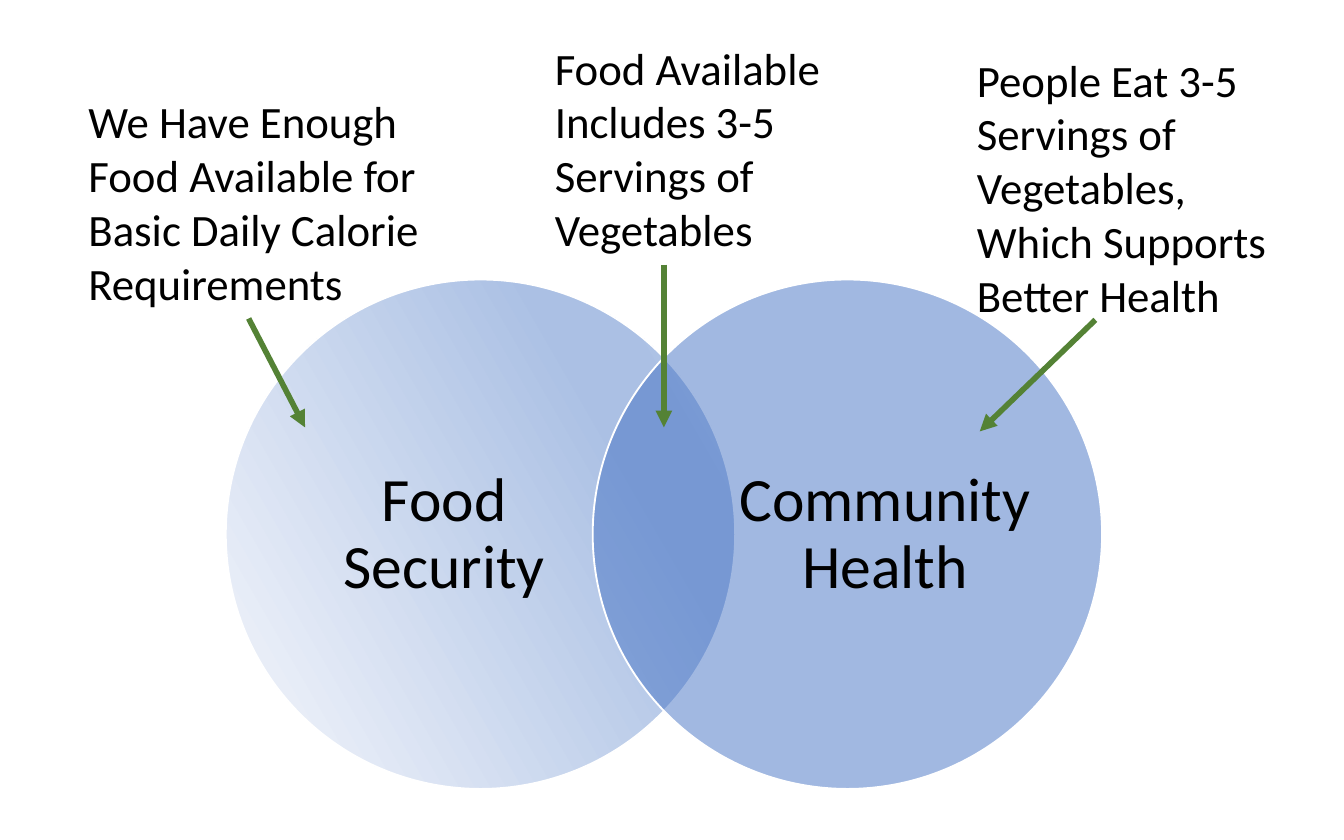
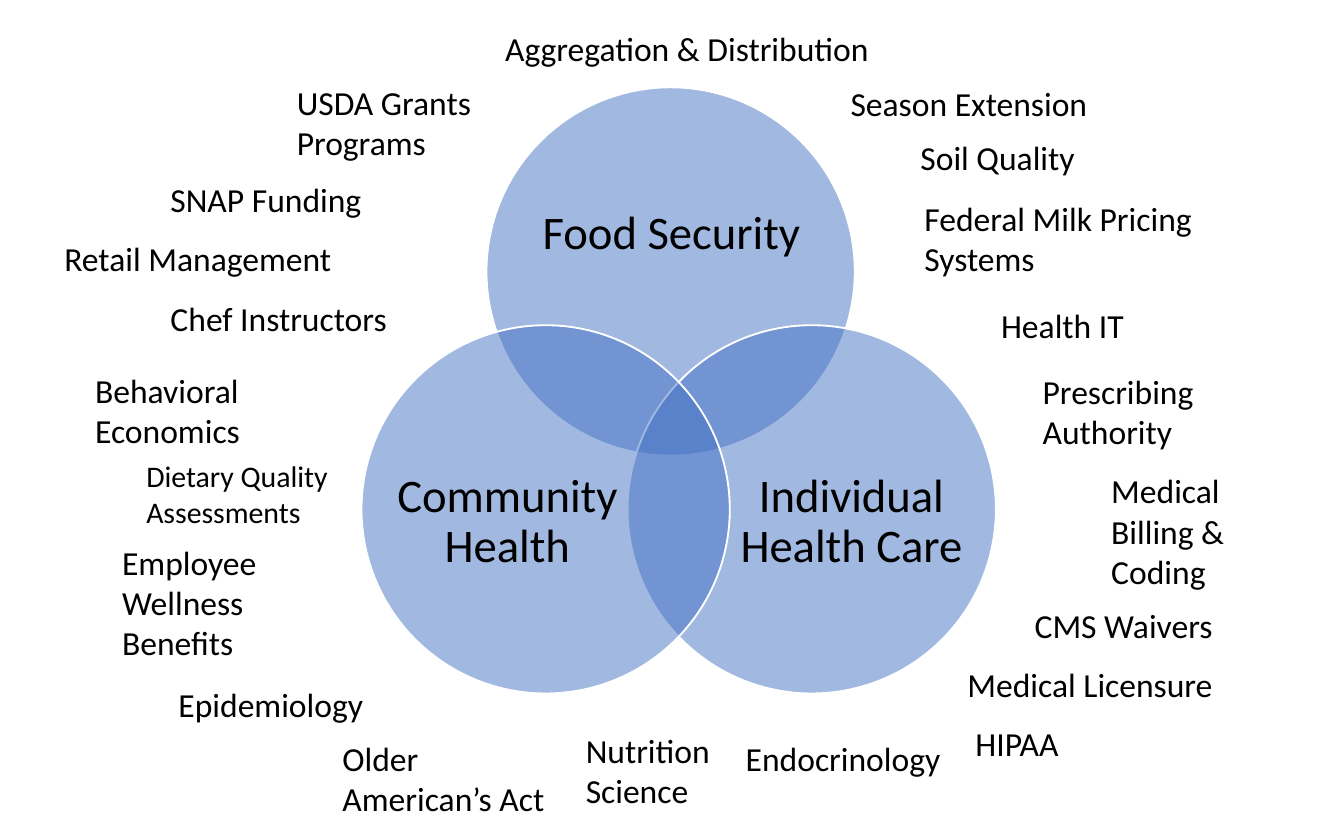
import dataclasses

import lxml.etree
import pptx
import pptx.dml.color
import pptx.enum.dml
import pptx.enum.shapes
import pptx.enum.text
import pptx.oxml.ns
import pptx.util

Inches = pptx.util.Inches
Pt = pptx.util.Pt
RGB = pptx.dml.color.RGBColor.from_string
qn = pptx.oxml.ns.qn


@dataclasses.dataclass(frozen=True)
class Theme:
    font: str = "Calibri"
    text: str = "000000"
    circle: str = "4472C4"
    circle_opacity: int = 50
    outline: str = "FFFFFF"
    arrow: str = "548235"
    fade: tuple = ((0, "F6F8FC"), (74, "ABC0E4"), (83, "ABC0E4"), (100, "C7D5ED"))
    fade_angle: int = 330
    outline_width: int = 1
    arrow_width: int = 3
    pair_label: int = 33
    trio_label: int = 25
    callout: int = 24
    topic: int = 18
    small_topic: int = 16


THEME = Theme()

PAIR_SIZE = 3.79
PAIR_TOP = 2.08
PAIR = [
    ("Food Security", 1.68, 2.21, True),
    ("Community Health", 4.41, 5.49, False),
]

CALLOUTS = [
    ("We Have Enough Food Available for Basic Daily Calorie Requirements",
     (0.56, 0.65, 2.93, 1.72), (1.85, 2.37), (2.27, 3.18)),
    ("Food Available Includes 3-5 Servings of Vegetables",
     (4.03, 0.25, 2.23, 1.72), (4.94, 1.97), (4.94, 3.18)),
    ("People Eat 3-5 Servings of Vegetables, Which Supports Better Health",
     (7.17, 0.34, 2.45, 2.12), (8.15, 2.38), (7.29, 3.21)),
]

TRIO_SIZE = 2.74
TRIO = [
    ("Food Security", (3.62, 0.65), (3.99, 1.13, 2.01, 1.23)),
    ("Individual Health Care", (4.67, 2.42), (5.51, 3.13, 1.65, 1.51)),
    ("Community Health", (2.69, 2.42), (2.95, 3.13, 1.65, 1.51)),
]

LINE_HEIGHTS = {1: 0.4, 2: 0.71, 3: 1.01}
TOPICS = [
    ("Federal Milk Pricing Systems", 6.78, 1.42, 2.24, 2),
    ("Prescribing Authority", 7.66, 2.71, 1.73, 2),
    ("Medical Billing & Coding", 8.17, 3.45, 1.36, 3),
    ("CMS Waivers", 7.6, 4.45, 1.85, 1),
    ("HIPAA", 7.16, 5.33, 1.3, 1),
    ("Season Extension", 6.23, 0.57, 2.09, 1),
    ("Older American’s Act", 2.45, 5.44, 1.84, 2),
    ("Epidemiology", 1.23, 5.04, 1.73, 1),
    ("Endocrinology", 5.45, 5.44, 1.66, 1),
    ("Aggregation & Distribution", 3.66, 0.16, 3.59, 1),
    ("USDA Grants Programs", 2.11, 0.56, 2.09, 2),
    ("Health IT", 7.35, 2.22, 1.92, 1),
    ("Employee Wellness Benefits", 0.81, 3.98, 1.52, 3),
    ("Medical Licensure", 7.1, 4.89, 2.76, 1),
    ("SNAP Funding", 1.17, 1.28, 1.96, 1),
    ("Soil Quality", 6.75, 0.97, 2.52, 1),
    ("Behavioral Economics", 0.61, 2.7, 1.57, 2),
    ("Nutrition Science", 4.26, 5.38, 1.78, 2),
    ("Chef Instructors", 1.17, 2.17, 1.89, 1),
    ("Retail Management", 0.38, 1.72, 2.68, 1),
]


def add_text(s, text, box, size):
    sp = s.shapes.add_textbox(*map(Inches, box))
    tf = sp.text_frame
    tf.word_wrap = True
    tf.auto_size = pptx.enum.text.MSO_AUTO_SIZE.SHAPE_TO_FIT_TEXT
    p = tf.paragraphs[0]
    p.text = text
    p.font.name = THEME.font
    p.font.size = Pt(size)
    p.font.color.rgb = RGB(THEME.text)
    return tf


def add_circle_label(s, text, box, size):
    tf = add_text(s, text, box, size)
    tf.auto_size = pptx.enum.text.MSO_AUTO_SIZE.NONE
    tf.vertical_anchor = pptx.enum.text.MSO_ANCHOR.MIDDLE
    tf.margin_left = tf.margin_right = tf.margin_top = tf.margin_bottom = 0
    p = tf.paragraphs[0]
    p.alignment = pptx.enum.text.PP_ALIGN.CENTER
    p.line_spacing = 0.9


def fill_translucent(sp):
    sp.fill.solid()
    sp.fill.fore_color.rgb = RGB(THEME.circle)
    color = sp.fill._xPr.find(qn("a:solidFill"))[0]
    alpha = lxml.etree.SubElement(color, qn("a:alpha"))
    alpha.set("val", str(THEME.circle_opacity * 1000))


def fill_faded(sp):
    sp.fill.gradient()
    grad = sp.fill._xPr.find(qn("a:gradFill"))
    stops = grad.find(qn("a:gsLst"))
    for stop in list(stops):
        stops.remove(stop)
    for position, color in THEME.fade:
        stop = lxml.etree.SubElement(stops, qn("a:gs"), pos=str(position * 1000))
        lxml.etree.SubElement(stop, qn("a:srgbClr"), val=color)
    grad.find(qn("a:lin")).set("ang", str(THEME.fade_angle * 60000))


def add_circle(s, left, top, size, faded=False):
    oval = pptx.enum.shapes.MSO_SHAPE.OVAL
    sp = s.shapes.add_shape(oval, *map(Inches, (left, top, size, size)))
    sp.shadow.inherit = False
    if faded:
        fill_faded(sp)
    else:
        fill_translucent(sp)
    sp.line.color.rgb = RGB(THEME.outline)
    sp.line.width = Pt(THEME.outline_width)


def add_arrow(s, start, end):
    straight = pptx.enum.shapes.MSO_CONNECTOR.STRAIGHT
    sp = s.shapes.add_connector(straight, *map(Inches, start + end))
    sp.line.color.rgb = RGB(THEME.arrow)
    sp.line.width = Pt(THEME.arrow_width)
    lxml.etree.SubElement(sp.line._get_or_add_ln(), qn("a:tailEnd"), type="triangle")
    lxml.etree.SubElement(sp._element.spPr, qn("a:effectLst"))


def add_pair_slide(prs):
    s = prs.slides.add_slide(prs.slide_layouts[6])
    for label, left, label_left, faded in PAIR:
        add_circle(s, left, PAIR_TOP, PAIR_SIZE, faded)
        add_circle_label(s, label, (label_left, 2.53, 2.19, 2.9), THEME.pair_label)
    for text, box, start, end in CALLOUTS:
        add_text(s, text, box, THEME.callout)
        add_arrow(s, start, end)


def add_trio_slide(prs):
    s = prs.slides.add_slide(prs.slide_layouts[6])
    for label, corner, label_box in TRIO:
        add_circle(s, *corner, TRIO_SIZE)
        add_circle_label(s, label, label_box, THEME.trio_label)
    for text, left, top, width, lines in TOPICS:
        add_text(s, text, (left, top, width, LINE_HEIGHTS[lines]), THEME.topic)
    add_text(s, "Dietary Quality Assessments", (0.99, 3.36, 1.98, 0.64), THEME.small_topic)


def main():
    prs = pptx.Presentation()
    prs.slide_width = Inches(10)
    prs.slide_height = Inches(6.25)
    add_pair_slide(prs)
    add_trio_slide(prs)
    prs.save("out.pptx")


if __name__ == "__main__":
    main()
